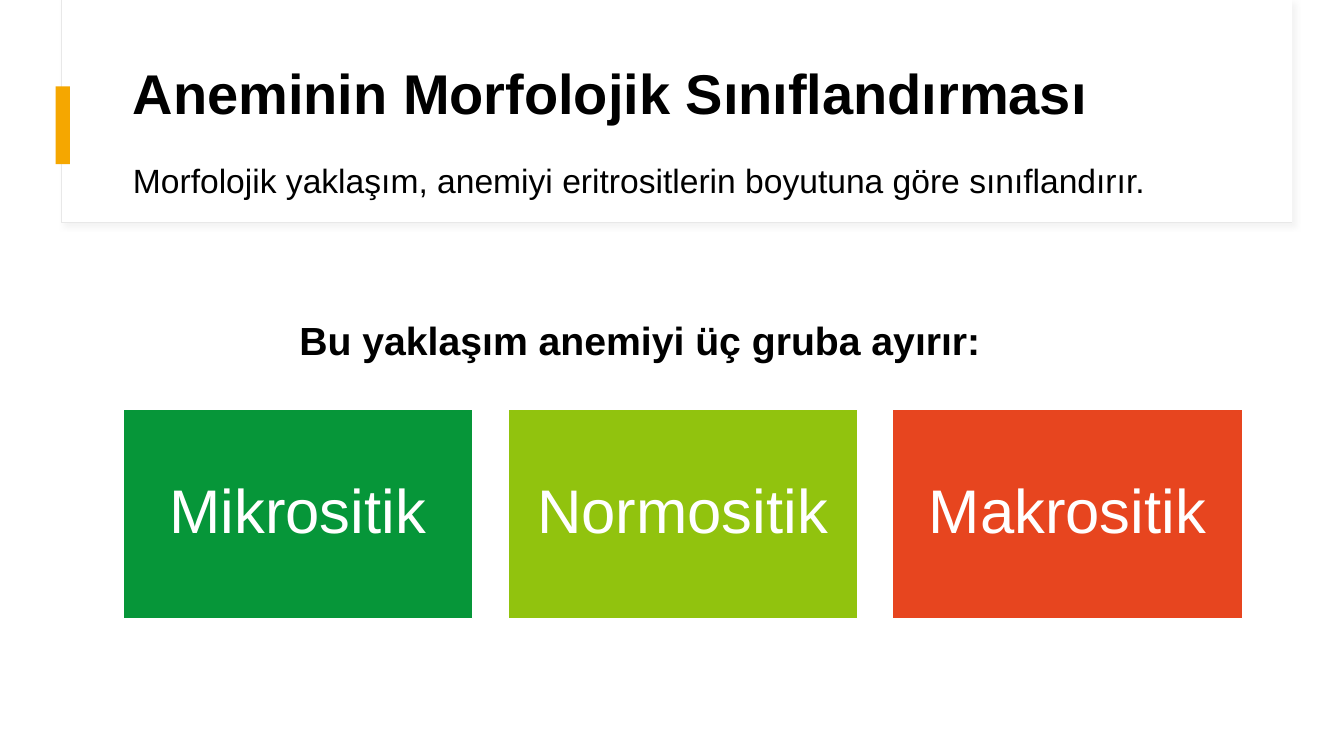
"""Build a slide on the morphological classification of anemia."""
from lxml.etree import SubElement
from pptx import Presentation
from pptx.dml.color import RGBColor
from pptx.enum.shapes import MSO_SHAPE
from pptx.enum.text import MSO_ANCHOR, PP_ALIGN
from pptx.oxml.ns import qn
from pptx.util import Cm, Pt

WHITE = RGBColor(0xFF, 0xFF, 0xFF)
BLACK = RGBColor(0x00, 0x00, 0x00)
PALE_GREY = RGBColor(0xE8, 0xE8, 0xE8)
AMBER = RGBColor(0xF5, 0xA7, 0x00)
GREEN = RGBColor(0x06, 0x96, 0x39)
LIME = RGBColor(0x91, 0xC3, 0x0E)
RED = RGBColor(0xE7, 0x45, 0x1F)


def add_block(left, top, width, height, fill, line=None, line_width=1):
    block = page.shapes.add_shape(
        MSO_SHAPE.RECTANGLE, Cm(left), Cm(top), Cm(width), Cm(height))
    block.shadow.inherit = False
    block.fill.solid()
    block.fill.fore_color.rgb = fill
    if line is None:
        block.line.fill.background()
    else:
        block.line.color.rgb = line
        block.line.width = Pt(line_width)
    return block


def write(box, text, size, color, bold=False, align=PP_ALIGN.LEFT, spacing=1.0):
    box.text_frame.word_wrap = True
    paragraph = box.text_frame.paragraphs[0]
    paragraph.text = text
    paragraph.alignment = align
    paragraph.line_spacing = spacing
    paragraph.font.name = "Arial"
    paragraph.font.size = Pt(size)
    paragraph.font.bold = bold
    paragraph.font.color.rgb = color


deck = Presentation()
deck.slide_width = Cm(33.87)
deck.slide_height = Cm(19.05)
page = deck.slides.add_slide(deck.slide_layouts[6])

panel = add_block(1.55, 0, 31.01, 5.61, WHITE, PALE_GREY, 0.75)
effects = panel._element.spPr.find(qn("a:effectLst"))
shadow = SubElement(effects, qn("a:outerShdw"), blurRad=str(Pt(4)),
                    dist=str(Pt(3)), dir="2700000", algn="tl", rotWithShape="0")
shadow_color = SubElement(shadow, qn("a:srgbClr"), val="D8D8D8")
SubElement(shadow_color, qn("a:alpha"), val="30000")
add_block(1.57, 0, 30.99, 5.59, WHITE)
add_block(1.4, 2.18, 0.36, 1.96, AMBER)

title = page.shapes.add_textbox(Cm(3.1), Cm(1.52), Cm(28.22), Cm(1.8))
title.text_frame.vertical_anchor = MSO_ANCHOR.MIDDLE
write(title, "Aneminin Morfolojik Sınıflandırması", 40, BLACK, bold=True, spacing=0.9)

subtitle = page.shapes.add_textbox(Cm(3.1), Cm(3.91), Cm(29.54), Cm(1.27))
write(subtitle,
      "Morfolojik yaklaşım, anemiyi eritrositlerin boyutuna göre sınıflandırır.",
      24, BLACK)

heading = page.shapes.add_textbox(Cm(5.75), Cm(7.85), Cm(20.75), Cm(1.45))
write(heading, "Bu yaklaşım anemiyi üç gruba ayırır:", 28, BLACK,
      bold=True, align=PP_ALIGN.CENTER)

groups = [("Mikrositik", GREEN), ("Normositik", LIME), ("Makrositik", RED)]
for index, (name, color) in enumerate(groups):
    card = add_block(3.1 + 9.7 * index, 10.31, 8.81, 5.28, color, WHITE)
    frame = card.text_frame
    frame.vertical_anchor = MSO_ANCHOR.MIDDLE
    frame.margin_left = frame.margin_right = Cm(0.46)
    frame.margin_top = frame.margin_bottom = Cm(0.46)
    write(card, name, 44, WHITE, align=PP_ALIGN.CENTER, spacing=0.9)

deck.save("out.pptx")
